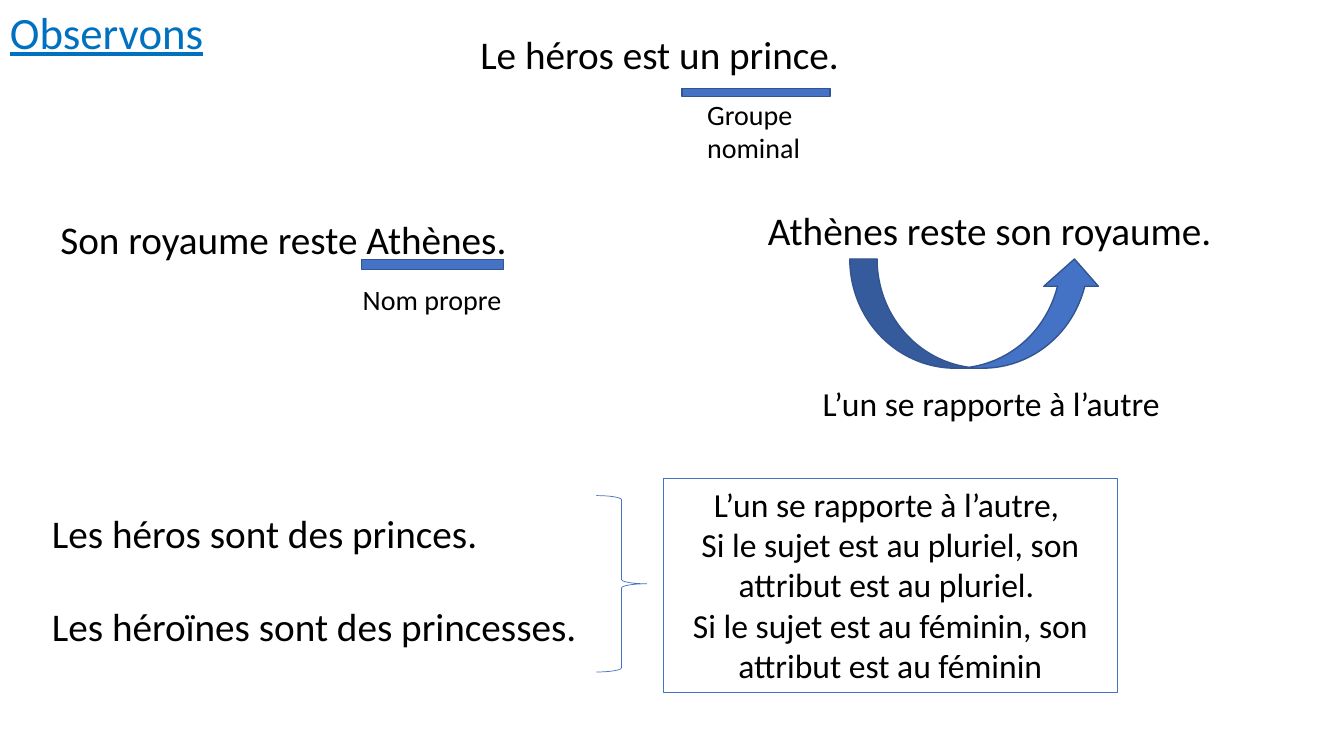
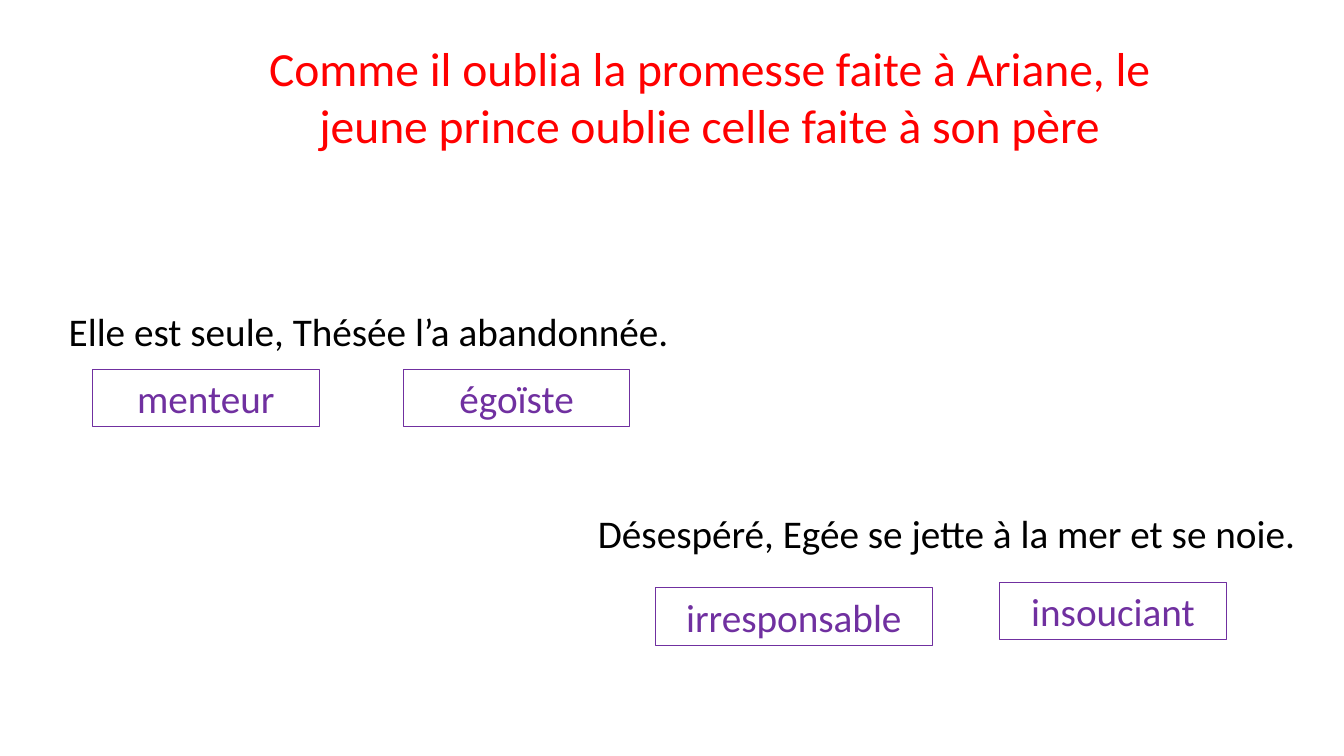
from pptx import Presentation
from pptx.dml.color import RGBColor
from pptx.enum.shapes import MSO_SHAPE as Shape
from pptx.enum.text import MSO_ANCHOR as Anchor, PP_ALIGN as Align
from pptx.util import Pt

FONT = "Calibri"
BLACK, RED, PURPLE = "000000", "FF0000", "7030A0"
TITLE_BLUE, BLUE, DARK_BLUE = "0070C0", "4472C4", "325491"
LINE_H = 41  # height of a one-line sentence box


def color(value):
    return RGBColor.from_string(value)


# Shared building blocks
def write(tf, lines, size, ink=BLACK, center=False, underline=None, wrap=True):
    tf.word_wrap = wrap
    tf.vertical_anchor = Anchor.TOP
    for i, line in enumerate(lines):
        p = tf.paragraphs[0] if i == 0 else tf.add_paragraph()
        p.text = line
        p.alignment = Align.CENTER if center else Align.LEFT
        font = p.font
        font.name, font.size, font.underline = FONT, Pt(size), underline
        font.color.rgb = color(ink)


def add_text(s, x, y, w, h, lines, size=28, **style):
    sp = s.shapes.add_textbox(Pt(x), Pt(y), Pt(w), Pt(h))
    write(sp.text_frame, lines, size, **style)


def add_figure(s, kind, x, y, w, h, fill=None, line=DARK_BLUE, weight=1):
    sp = s.shapes.add_shape(kind, Pt(x), Pt(y), Pt(w), Pt(h))
    sp.shadow.inherit = False
    if fill:
        sp.fill.solid()
        sp.fill.fore_color.rgb = color(fill)
    else:
        sp.fill.background()
    sp.line.color.rgb = color(line)
    sp.line.width = Pt(weight)
    return sp


def add_framed(s, x, y, w, h, lines, size=28, line=PURPLE, ink=PURPLE):
    sp = add_figure(s, Shape.RECTANGLE, x, y, w, h, line=line, weight=0.75)
    write(sp.text_frame, lines, size, ink=ink, center=True)


# Regions of the observation slide
def marked_sentence(s, x, y, w, text, bar, label, label_lines):
    """Sentence with an underlining bar and a label, both offset from (x, y)."""
    add_text(s, x, y, w, LINE_H, [text], wrap=False)
    bx, by, bw, bh = bar
    add_figure(s, Shape.MATH_MINUS, x + bx, y + by, bw, bh, fill=BLUE)
    lx, ly, lw, lh = label
    add_text(s, x + lx, y + ly, lw, lh, label_lines, size=20)


def linked_sentence(s, x, y):
    add_text(s, x, y, 335, LINE_H, ["Athènes reste son royaume."], wrap=False)
    arrow = add_figure(s, Shape.CURVED_RIGHT_ARROW, x + 116.5, y - 10, 78, 180, fill=BLUE)
    arrow.rotation = 270
    add_text(s, x + 4.5, y + 126, 324, 36, ["L’un se rapporte à l’autre"],
             size=24, center=True)


def agreement_rule(s, x, y):
    examples = [("Les héros sont des princes.", 322),
                ("Les héroïnes sont des princesses.", 394)]
    for i, (text, w) in enumerate(examples):
        add_text(s, x, y + 18 + 67 * i, w, LINE_H, [text], wrap=False)
    add_figure(s, Shape.RIGHT_BRACE, x + 396, y + 12, 36, 126, line=BLUE, weight=0.5)
    add_framed(s, x + 444, y, 324, 153,
               ["L’un se rapporte à l’autre, ",
                "Si le sujet est au pluriel, son attribut est au pluriel. ",
                "Si le sujet est au féminin, son attribut est au féminin"],
               size=24, line=BLUE, ink=BLACK)


def observation_slide(s):
    add_text(s, 0, 0, 390, 46, ["Observons"], size=32, ink=TITLE_BLUE, underline=True)
    marked_sentence(s, 336, 18, 280, "Le héros est un prince.",
                    (132, 36, 144, 24), (162, 48, 81.5, 55.5), ["Groupe", "nominal"])
    marked_sentence(s, 36, 150, 337, "Son royaume reste Athènes.",
                    (204, 24, 138, 30), (216, 48, 114.5, 31.5), ["Nom propre"])
    linked_sentence(s, 541.5, 144)
    agreement_rule(s, 30, 342)


# Regions of the character slide
def described_sentence(s, x, y, w, text, traits):
    """Sentence with framed traits, each given as (word, dx, dy, width)."""
    add_text(s, x, y, w, LINE_H, [text])
    for word, dx, dy, tw in traits:
        add_framed(s, x + dx, y + dy, tw, LINE_H, [word])


def character_slide(s):
    add_text(s, 150, 24, 714, 90,
             ["Comme il oublia la promesse faite à Ariane, "
              "le jeune prince oublie celle faite à son père"],
             size=34, ink=RED, center=True)
    described_sentence(s, 42, 216, 462, "Elle est seule, Thésée l’a abandonnée.",
                       [("menteur", 24, 48, 162), ("égoïste", 246, 48, 162)])
    described_sentence(s, 420, 360, 516, "Désespéré, Egée se jette à la mer et se noie.",
                       [("irresponsable", 48, 60, 198), ("insouciant", 294, 56, 162)])


def main():
    prs = Presentation()
    prs.slide_width, prs.slide_height = Pt(960), Pt(540)
    for build in (observation_slide, character_slide):
        build(prs.slides.add_slide(prs.slide_layouts[6]))
    prs.save("out.pptx")


if __name__ == "__main__":
    main()
